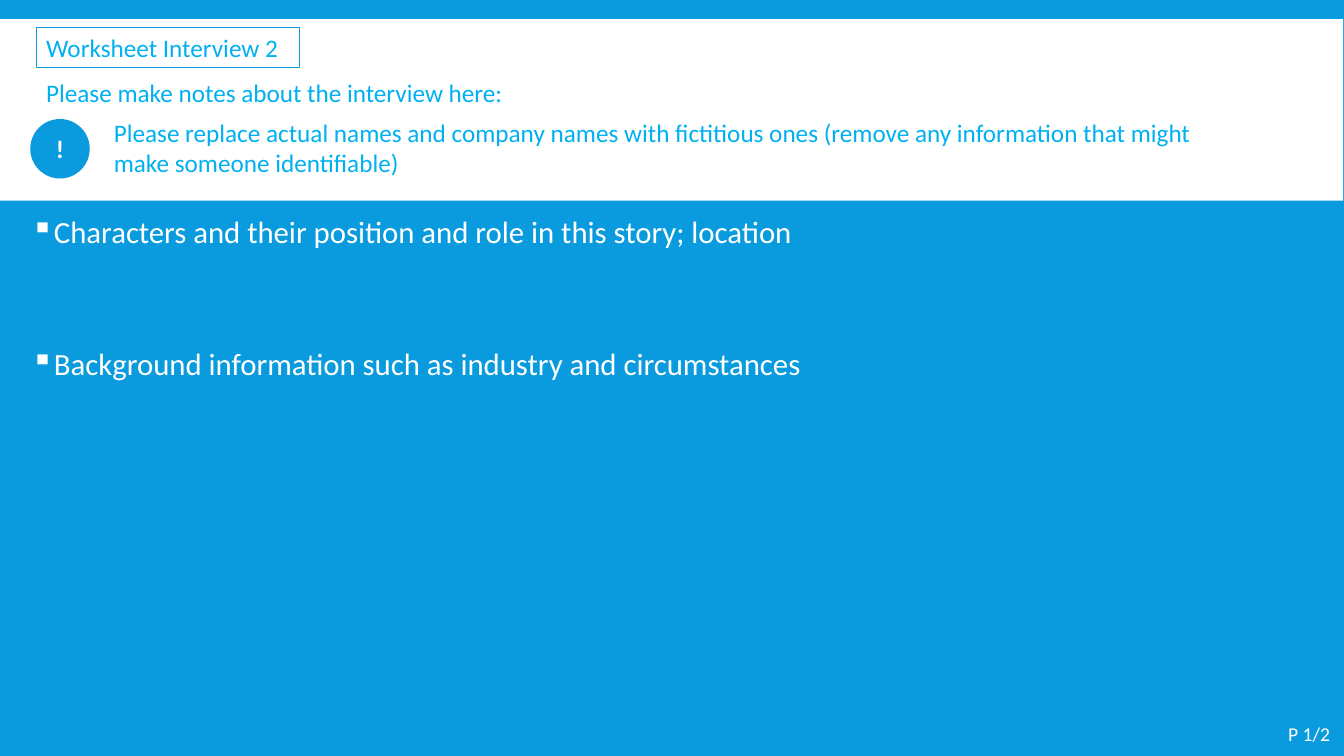
"""Builds the interview worksheet slide."""
from pptx import Presentation
from pptx.dml.color import RGBColor
from pptx.enum import shapes, text
from pptx.oxml import xmlchemy as xml
from pptx.util import Pt

BLUE, SKY, WHITE = "099BDD", "00B0F0", "FFFFFF"
KIND = shapes.MSO_SHAPE


def tint(code):
    return RGBColor.from_string(code)


class Sheet:
    def __init__(self, deck):
        self.page = deck.slides.add_slide(deck.slide_layouts[6])
        self.face = "Calibri"
        fill = self.page.background.fill
        fill.solid()
        fill.fore_color.rgb = tint(BLUE)

    def letter(self, item, words, size=18, color=SKY, bold=False, pad=(7.2, 3.6, 7.2, 3.6),
               mid=False):
        frame = item.text_frame
        left, top, right, low = map(Pt, pad)
        anchor = text.MSO_ANCHOR.MIDDLE if mid else text.MSO_ANCHOR.TOP
        form = {"word_wrap": True, "vertical_anchor": anchor, "margin_left": left,
                "margin_top": top, "margin_right": right, "margin_bottom": low}
        for key, val in form.items():
            setattr(frame, key, val)
        para = frame.paragraphs[0]
        para.alignment = text.PP_ALIGN.CENTER if mid else text.PP_ALIGN.LEFT
        run = para.add_run()
        run.text = words
        for key, val in {"name": self.face, "size": Pt(size), "bold": bold}.items():
            setattr(run.font, key, val)
        run.font.color.rgb = tint(color)
        return para

    def label(self, box, words, **form):
        item = self.page.shapes.add_textbox(*map(Pt, box))
        return self.letter(item, words, **form)

    def bullet(self, box, words):
        para = self.label(box, words, size=22, color=WHITE)
        para.line_spacing = 0.9
        prop = para._p.get_or_add_pPr()
        for key, val in {"marL": Pt(14.4), "indent": -Pt(14.4)}.items():
            prop.set(key, str(val))
        hue = xml.OxmlElement("a:buClr")
        hue.append(xml.OxmlElement("a:srgbClr"))
        hue[0].set("val", WHITE)
        mark = xml.OxmlElement("a:buChar")
        mark.set("char", "▪")
        prop.extend([hue, mark])

    def shape(self, kind, box, fill=None, line=None):
        item = self.page.shapes.add_shape(kind, *map(Pt, box))
        item.shadow.inherit = False
        if fill:
            item.fill.solid()
            item.fill.fore_color.rgb = tint(fill)
        else:
            item.fill.background()
        if line:
            item.line.color.rgb = tint(line)
            item.line.width = Pt(0.75)
        else:
            item.line.fill.background()
        return item


def main():
    deck = Presentation()
    deck.slide_width, deck.slide_height = Pt(960), Pt(540)
    sheet = Sheet(deck)
    sheet.shape(KIND.RECTANGLE, (0, 13.7, 959.5, 129.6), fill=WHITE)
    sheet.bullet((15.1, 151.2, 770.4, 98.6),
                 "Characters and their position and role in this story; location")
    sheet.bullet((15.1, 245.5, 770.4, 68.4),
                 "Background information such as industry and circumstances")
    sheet.label((74.2, 79.9, 802, 51), "Please replace actual names and company names with "
                "fictitious ones (remove any information that might make someone identifiable)")
    title = sheet.shape(KIND.RECTANGLE, (25.9, 19.4, 188, 29), line=BLUE)
    sheet.letter(title, "Worksheet Interview 2")
    sheet.label((25.9, 51.8, 350.6, 29), "Please make notes about the interview here:")
    alert = sheet.shape(KIND.OVAL, (21.6, 85, 42.5, 42.5), fill=BLUE)
    sheet.letter(alert, "!", color=WHITE, bold=True, mid=True)
    sheet.label((913, 508.3, 47, 31.7), "P 1/2", size=14, color=WHITE, pad=(7.2, 7.2, 0, 7.2))
    deck.save("out.pptx")


if __name__ == "__main__":
    main()
